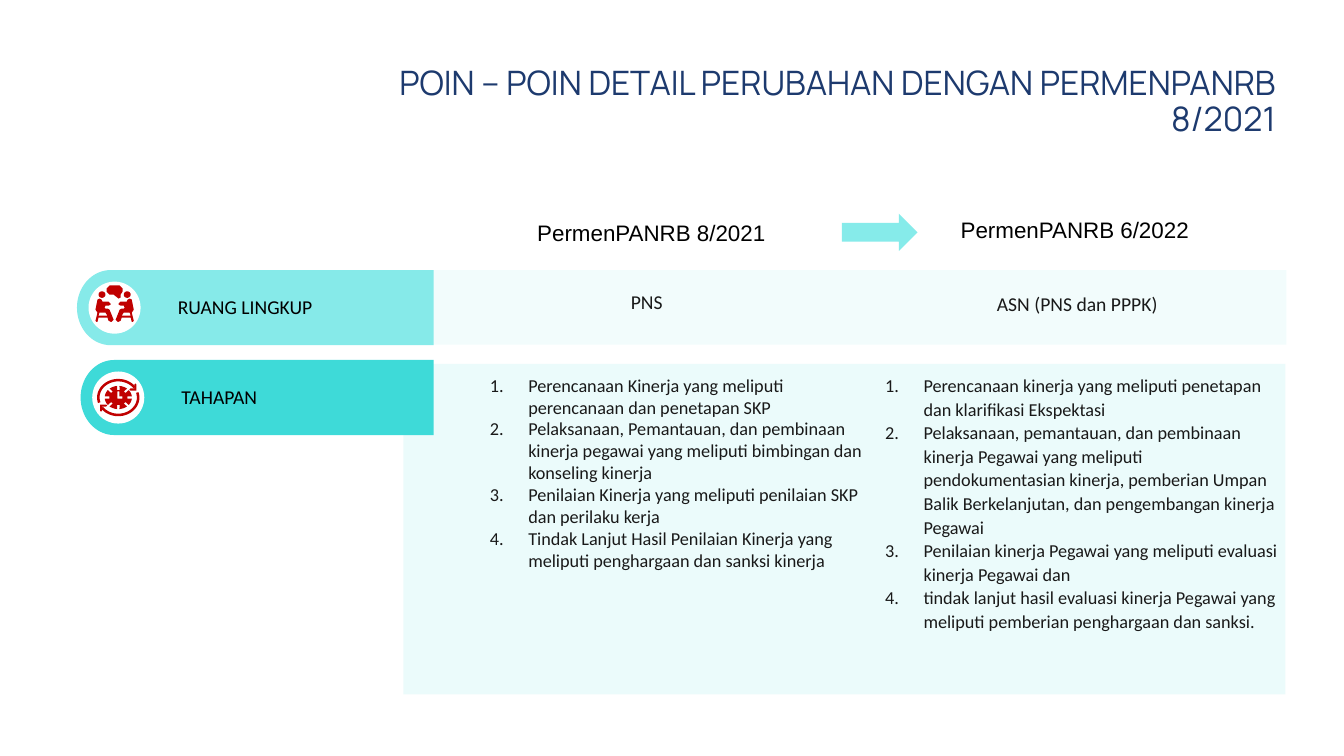
from dataclasses import dataclass
from math import cos, radians, sin

from lxml.etree import SubElement
from pptx import Presentation
from pptx.dml.color import RGBColor
from pptx.enum.shapes import MSO_SHAPE
from pptx.enum.text import PP_ALIGN
from pptx.oxml.ns import qn
from pptx.util import Emu, Inches, Pt

Point = tuple[float, float]

# Grid of 160 columns by 90 rows with square cells
SLIDE_WIDTH, SLIDE_HEIGHT = Inches(13.33), Inches(7.5)
CELL = SLIDE_HEIGHT / 90
ICON_UNIT = 0.12  # cells

AQUA, TURQUOISE, RED, WHITE = "86EAE9", "3EDAD8", "C00000", "FFFFFF"
NAVY, BLACK, INK = "1D3A6E", "000000", "191919"


@dataclass
class Box:
    left: float
    top: float
    width: float
    height: float

    def emu(self) -> list[Emu]:
        return [cells(n) for n in (self.left, self.top, self.width, self.height)]


@dataclass
class Caption:
    box: Box
    lines: list[str]
    size: float = 14
    font: str = "Calibri"
    color: str = INK
    align: PP_ALIGN = PP_ALIGN.LEFT
    spacing: float | Pt | None = Pt(16.8)
    inset: bool = False
    numbered: bool = False


@dataclass
class Aspect:
    label: str
    color: str
    tab: Box
    band: Box
    pictogram: list[list[list[Point]]]


def cells(count: float) -> Emu:
    return Emu(round(count * CELL))


def paint(shape, color: str, opacity: int = 100) -> None:
    shape.shadow.inherit = False
    shape.fill.solid()
    shape.fill.fore_color.rgb = RGBColor.from_string(color)
    shape.line.fill.background()
    if opacity < 100:
        tint = shape.fill._xPr.find(qn("a:solidFill"))[0]
        SubElement(tint, qn("a:alpha"), val=str(opacity * 1000))


def draw_preset(slide, kind: MSO_SHAPE, box: Box, color: str, opacity: int = 100) -> None:
    paint(slide.shapes.add_shape(kind, *box.emu()), color, opacity)


def draw_outline(slide, contours: list[list[Point]], color: str) -> None:
    scaled = [[(cells(x), cells(y)) for x, y in contour] for contour in contours]
    builder = slide.shapes.build_freeform(*scaled[0][0])
    for index, contour in enumerate(scaled):
        if index:
            builder.move_to(*contour[0])
        builder.add_line_segments(contour[1:], close=True)
    paint(builder.convert_to_shape(), color)


def draw_caption(slide, caption: Caption) -> None:
    frame = slide.shapes.add_textbox(*caption.box.emu()).text_frame
    frame.word_wrap = True
    if not caption.inset:
        frame.margin_left = frame.margin_right = frame.margin_top = frame.margin_bottom = 0
    frame.text = "\n".join(caption.lines)
    for paragraph in frame.paragraphs:
        paragraph.alignment = caption.align
        paragraph.line_spacing = caption.spacing
        if caption.numbered:
            properties = paragraph._p.get_or_add_pPr()
            properties.set("marL", str(Inches(0.38)))
            properties.set("indent", str(-Inches(0.38)))
            SubElement(properties, qn("a:buAutoNum"), type="arabicPeriod")
        for run in paragraph.runs:
            run.font.size = Pt(caption.size)
            run.font.name = caption.font
            run.font.color.rgb = RGBColor.from_string(caption.color)


def arc(rx: float, ry: float, start: int, end: int, step: int) -> list[Point]:
    return [(rx * cos(radians(a)), ry * sin(radians(a))) for a in range(start, end, step)]


def flip(contour: list[Point], x_sign: int, y_sign: int) -> list[Point]:
    return [(x * x_sign, y * y_sign) for x, y in contour]


def dialogue_pictogram() -> list[list[list[Point]]]:
    sitter = [(-15, -9), (-17, -8), (-19, 2), (-17, 5), (-19, 13), (-18, 14), (-17, 14),
              (-16, 10), (-7, 10), (-6, 13), (-4, 14), (-3, 14), (-1, 12), (-5, 2),
              (-7, 1), (-9, 1), (-10, 0), (-9, -2), (-6, -2), (-4, -3), (-4, -4),
              (-6, -6), (-12, -6), (-13, -8)]
    chair_gap = [(-9, 5), (-7, 8), (-16, 8), (-15, 5)]
    head = [(x - 12.5, y - 13) for x, y in arc(3.4, 3.2, 0, 360, 15)]
    bubble = [(-8, -19), (-5, -22), (5, -22), (8, -19), (8, -16), (6, -13), (6, -10),
              (4, -9), (-1, -13), (-5, -13), (-8, -16)]
    people = [[flip(contour, side, 1) for contour in part]
              for side in (1, -1) for part in ([sitter, chair_gap], [head])]
    return people + [[bubble]]


def cycle_pictogram() -> list[list[list[Point]]]:
    sweep = arc(21, 18.5, -17, 146, 6) + arc(18.5, 16, -17, 146, 6)[::-1]
    arrowhead = [(-18, 7), (-12, 7), (-11, 8), (-12, 9), (-16, 9), (-16, 13), (-17, 14), (-18, 13)]
    gear = []
    for spoke in range(0, 360, 45):
        gear += arc(13.5, 11.5, spoke - 5, spoke - 4, 1)
        gear += arc(9, 7.5, spoke - 8, spoke + 9, 16)
        gear += arc(13.5, 11.5, spoke + 5, spoke + 40, 10)
    hands = [(-1, -6), (1, -6), (1, -1), (4, -1), (4, 1), (-1, 1)]
    arrows = [[flip(part, turn, turn)] for turn in (1, -1) for part in (sweep, arrowhead)]
    return arrows + [[gear, hands]]


def draw_aspect(slide, aspect: Aspect) -> None:
    tab = aspect.tab
    draw_preset(slide, MSO_SHAPE.RECTANGLE, aspect.band, aspect.color, opacity=10)
    # Tab with a rounded left end
    right, middle = tab.left + tab.width, tab.top + tab.height / 2
    rounded = [(tab.left + 4 + x, middle + y) for x, y in arc(4, tab.height / 2, 90, 271, 5)]
    draw_outline(slide, [[(right, tab.top + tab.height), *rounded, (right, tab.top)]], aspect.color)
    # Disc and pictogram
    center = tab.left + 4.48
    draw_preset(slide, MSO_SHAPE.OVAL, Box(center - 3.1, middle - 3.1, 6.2, 6.2), WHITE)
    for part in aspect.pictogram:
        placed = [[(center + x * ICON_UNIT, middle + y * ICON_UNIT) for x, y in contour]
                  for contour in part]
        draw_outline(slide, placed, RED)
    draw_caption(slide, Caption(Box(tab.left + 12, tab.top + 3, 30.48, 2.88),
                                [aspect.label], color=BLACK))


ASPECTS = [
    Aspect("RUANG LINGKUP", AQUA, Box(9.16, 32.16, 42.44, 8.94),
           Box(47.4, 32.16, 105.72, 8.88), dialogue_pictogram()),
    Aspect("TAHAPAN", TURQUOISE, Box(9.6, 42.86, 42, 8.94),
           Box(48, 43.32, 105, 39.36), cycle_pictogram()),
]

STAGES_2021 = [
    "Perencanaan Kinerja yang meliputi perencanaan dan penetapan SKP",
    "Pelaksanaan, Pemantauan, dan pembinaan kinerja pegawai yang meliputi bimbingan dan konseling kinerja",
    "Penilaian Kinerja yang meliputi penilaian SKP dan perilaku kerja",
    "Tindak Lanjut Hasil Penilaian Kinerja yang meliputi penghargaan dan sanksi kinerja",
]
STAGES_2022 = [
    "Perencanaan kinerja yang meliputi penetapan dan klarifikasi Ekspektasi",
    "Pelaksanaan, pemantauan, dan pembinaan kinerja Pegawai yang meliputi pendokumentasian kinerja, "
    "pemberian Umpan Balik Berkelanjutan, dan pengembangan kinerja Pegawai",
    "Penilaian kinerja Pegawai yang meliputi evaluasi kinerja Pegawai dan",
    "tindak lanjut hasil evaluasi kinerja Pegawai yang meliputi pemberian penghargaan dan sanksi.",
]

CAPTIONS = [
    Caption(Box(40.08, 7.32, 112.92, 16.68), ["POIN – POIN DETAIL PERUBAHAN DENGAN PERMENPANRB 8/2021"],
            24, "Manrope", NAVY, PP_ALIGN.RIGHT, 0.9, inset=True),
    Caption(Box(62.76, 25.44, 31.32, 4.44), ["PermenPANRB 8/2021"], 16, "Arial", BLACK,
            spacing=None, inset=True),
    Caption(Box(113.16, 25.15, 31.32, 4.44), ["PermenPANRB 6/2022"], 16, "Arial", BLACK,
            spacing=None, inset=True),
    Caption(Box(69.96, 34.56, 14.04, 2.88), ["PNS"], align=PP_ALIGN.CENTER),
    Caption(Box(117.72, 34.75, 21, 5.64), ["ASN (PNS dan PPPK)"], align=PP_ALIGN.CENTER),
    Caption(Box(58.32, 44.52, 44.4, 31.44), STAGES_2021, 13, spacing=None, numbered=True),
    Caption(Box(105.36, 44.4, 47.04, 36.72), STAGES_2022, 13, numbered=True),
]


def main() -> None:
    deck = Presentation()
    deck.slide_width, deck.slide_height = SLIDE_WIDTH, SLIDE_HEIGHT
    slide = deck.slides.add_slide(deck.slide_layouts[6])
    for aspect in ASPECTS:
        draw_aspect(slide, aspect)
    for caption in CAPTIONS:
        draw_caption(slide, caption)
    # Arrow from the old regulation to the new one
    draw_preset(slide, MSO_SHAPE.RIGHT_ARROW, Box(100.2, 25.44, 9, 4.44), "86EBEA")
    deck.save("out.pptx")


if __name__ == "__main__":
    main()
